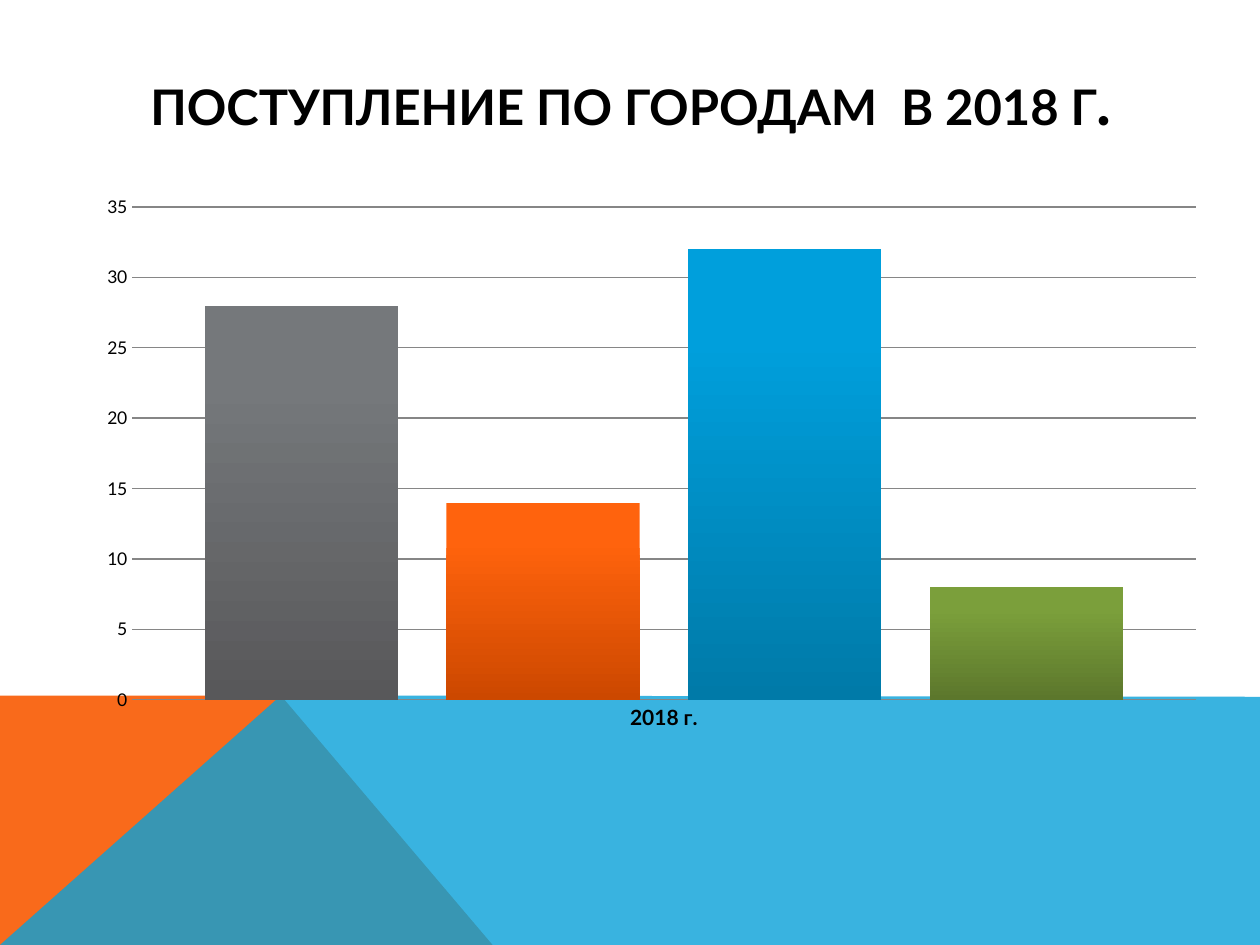
from dataclasses import dataclass

from lxml import etree
from pptx import Presentation
from pptx.chart import data as chart_data
from pptx.dml.color import RGBColor
from pptx.enum import chart as chart_enum, text
from pptx.oxml import ns
from pptx.util import Inches, Pt


@dataclass(frozen=True)
class Theme:
    font: str = "Lato"
    ink: str = "000000"
    grid: str = "868686"
    orange: str = "F96A1B"
    blue: str = "08A1D9"
    # upper and lower colour of each column
    columns: tuple = (("75787B", "58585A"), ("FF630D", "CC4800"),
                      ("009FDC", "007AA8"), ("7B9F3B", "5C772C"))
    title_size: int = 28
    title_end_size: int = 36
    category_size: int = 12
    chart_size: int = 10


THEME = Theme()
ADMISSIONS = [28, 14, 32, 8]


def set_values(target, values):
    for name, value in values.items():
        setattr(target, name, value)


def style_font(font, size, bold=False):
    set_values(font, {"name": THEME.font, "size": Pt(size), "bold": bold})
    font.color.rgb = RGBColor.from_string(THEME.ink)


def add_polygon(slide, points, color, opacity=100):
    """Draw a closed outline through points given in inches."""
    corners = [(Inches(x), Inches(y)) for x, y in points]
    builder = slide.shapes.build_freeform(*corners[0])
    builder.add_line_segments(corners[1:], close=True)
    shape = builder.convert_to_shape()
    shape.shadow.inherit = False
    shape.line.fill.background()
    shape.fill.solid()
    shape.fill.fore_color.rgb = RGBColor.from_string(color)
    if opacity < 100:
        color_node = shape.fill._xPr.find(".//" + ns.qn("a:srgbClr"))
        etree.SubElement(color_node, ns.qn("a:alpha"), val=str(opacity * 1000))


def add_footer_band(slide, left, top, width, height):
    """Orange wedge under a translucent blue band; both meet at the peak."""
    right, bottom = left + width, top + height
    peak = (left + 2.23, top)
    add_polygon(slide, [(left, bottom), (left, top), peak,
                        (left + 3.91, bottom)], THEME.orange)
    add_polygon(slide, [(left, bottom), peak, (right, top + 0.01),
                        (right, bottom)], THEME.blue, opacity=80)


def add_title(slide, left, top, width, height):
    box = slide.shapes.add_textbox(*map(Inches, (left, top, width, height)))
    set_values(box.text_frame, {"word_wrap": True,
                                "vertical_anchor": text.MSO_ANCHOR.MIDDLE})
    paragraph = box.text_frame.paragraphs[0]
    paragraph.alignment = text.PP_ALIGN.CENTER
    for words, size in [("ПОСТУПЛЕНИЕ ПО ГОРОДАМ  В 2018 Г", THEME.title_size),
                        (".", THEME.title_end_size)]:
        run = paragraph.add_run()
        run.text = words
        style_font(run.font, size, bold=True)


def fix_plot_area(chart, **fractions):
    """Place the inner plot area by fractions of the chart frame."""
    plot_area = chart._chartSpace.chart.plotArea
    for old in plot_area.findall(ns.qn("c:layout")):
        plot_area.remove(old)
    layout = etree.Element(ns.qn("c:layout"))
    manual = etree.SubElement(layout, ns.qn("c:manualLayout"))
    settings = {"layoutTarget": "inner", "xMode": "edge", "yMode": "edge", **fractions}
    for name, value in settings.items():
        etree.SubElement(manual, ns.qn(f"c:{name}"), val=str(value))
    plot_area.insert(0, layout)


def add_city_chart(slide, left, top, width, height):
    data = chart_data.CategoryChartData()
    data.categories = ["2018 г."]
    for value in ADMISSIONS:
        data.add_series("", [value])
    chart = slide.shapes.add_chart(
        chart_enum.XL_CHART_TYPE.COLUMN_CLUSTERED,
        *map(Inches, (left, top, width, height)), data).chart
    set_values(chart, {"has_legend": False, "has_title": False})
    style_font(chart.font, THEME.chart_size)
    fix_plot_area(chart, x=0.042, y=0.035, w=0.938, h=0.79)

    plot = chart.plots[0]
    set_values(plot, {"gap_width": 75, "overlap": -25, "vary_by_categories": False})
    for series, colors in zip(plot.series, THEME.columns):
        fill = series.format.fill
        fill.gradient()
        fill.gradient_angle = 270
        for stop, color, position in zip(fill.gradient_stops, colors, (0.2, 1)):
            stop.color.rgb = RGBColor.from_string(color)
            stop.position = position

    for axis in (chart.category_axis, chart.value_axis):
        axis.major_tick_mark = chart_enum.XL_TICK_MARK.NONE
        axis.format.line.fill.background()
    style_font(chart.category_axis.tick_labels.font, THEME.category_size, bold=True)
    set_values(chart.value_axis, {"minimum_scale": 0, "maximum_scale": 35,
                                  "major_unit": 5, "has_major_gridlines": True})
    grid_line = chart.value_axis.major_gridlines.format.line
    grid_line.width = Pt(0.75)
    grid_line.color.rgb = RGBColor.from_string(THEME.grid)


def main():
    presentation = Presentation()
    set_values(presentation, {"slide_width": Inches(10), "slide_height": Inches(7.5)})
    slide = presentation.slides.add_slide(presentation.slide_layouts[6])
    add_footer_band(slide, 0, 5.52, 10, 1.98)
    add_title(slide, 0.51, 0.21, 9, 1.17)
    add_city_chart(slide, 0.67, 1.47, 9, 4.95)
    presentation.save("out.pptx")


if __name__ == "__main__":
    main()
